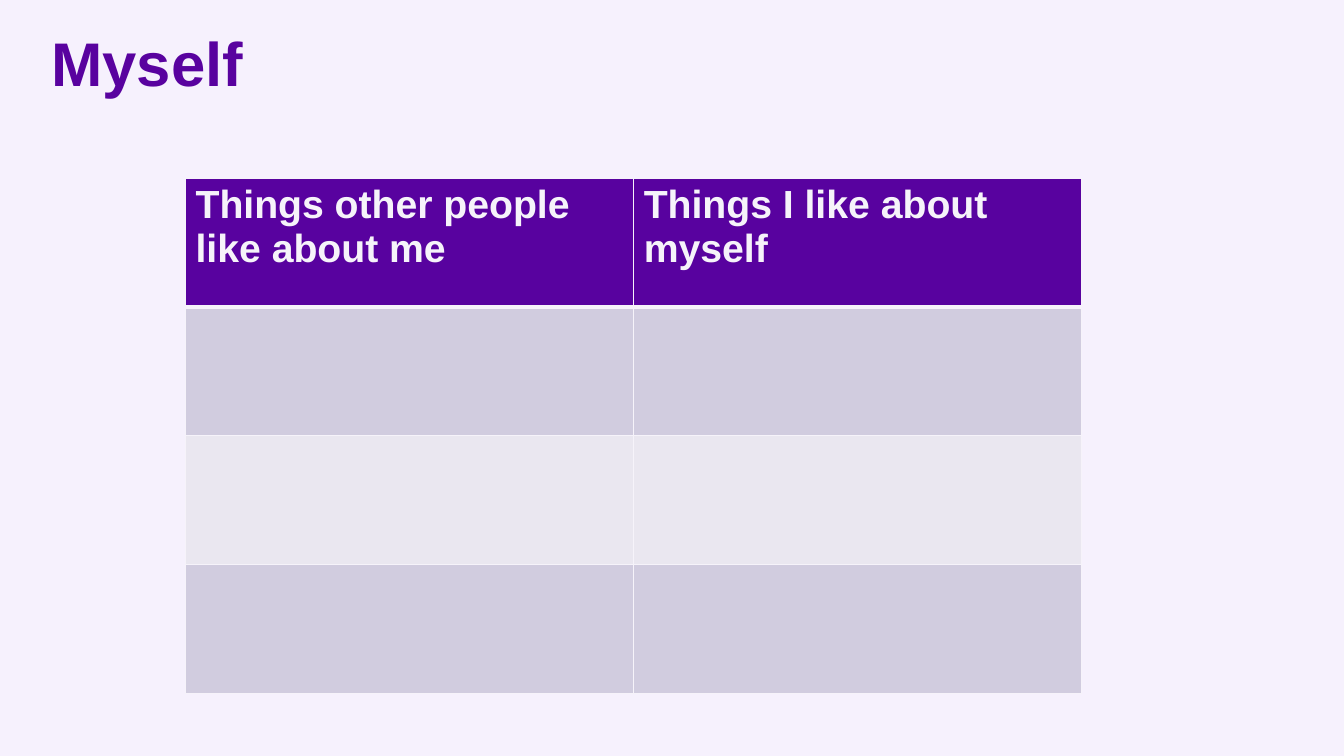
from pptx import Presentation
from pptx.dml.color import RGBColor
from pptx.enum.text import MSO_ANCHOR, PP_ALIGN
from pptx.oxml.ns import qn
from pptx.util import Inches, Pt
from lxml.etree import SubElement

BACKGROUND, PURPLE, HEADER_FILL, PALE = "F6F1FD", "59029F", "58029F", "F6F3FA"
BANDS = ["D1CCDF", "EAE7F0"]
HEADINGS = ["Things other people like about me", "Things I like about myself"]
ANSWER_ROWS = 3


def color(hex_code):
    return RGBColor.from_string(hex_code)


def add_text(paragraph, text, size, hex_code):
    run = paragraph.add_run()
    run.text = text
    run.font.name = "Arial"
    run.font.size = Pt(size)
    run.font.bold = True
    run.font.color.rgb = color(hex_code)


def add_borders(cell, bottom_width, top_width):
    properties = cell._tc.get_or_add_tcPr()
    widths = {"a:lnL": 1, "a:lnR": 1, "a:lnT": top_width, "a:lnB": bottom_width}
    for side, width in widths.items():
        line = SubElement(properties, qn(side), w=str(Pt(width)))
        fill = SubElement(line, qn("a:solidFill"))
        SubElement(fill, qn("a:srgbClr"), val=PALE)


def place_title(slide, left, top, width, height):
    title = slide.shapes.title
    title.left, title.top = Inches(left), Inches(top)
    title.width, title.height = Inches(width), Inches(height)
    frame = title.text_frame
    frame.margin_left = frame.margin_right = 0
    frame.margin_top = frame.margin_bottom = 0
    frame.word_wrap = True
    frame.vertical_anchor = MSO_ANCHOR.TOP
    heading = frame.paragraphs[0]
    heading.alignment = PP_ALIGN.LEFT
    heading.line_spacing = 0.9
    add_text(heading, "Myself", 44, PURPLE)


def add_likes_table(slide, left, top, width, height):
    likes = slide.shapes.add_table(
        ANSWER_ROWS + 1, len(HEADINGS),
        Inches(left), Inches(top), Inches(width), Inches(height)).table

    # Borders go before the fill in each cell's properties
    for row_index, row in enumerate(likes.rows):
        for column_index, cell in enumerate(row.cells):
            is_header = row_index == 0
            add_borders(cell, 3 if is_header else 1, 3 if row_index == 1 else 1)
            cell.fill.solid()
            if is_header:
                cell.fill.fore_color.rgb = color(HEADER_FILL)
                add_text(cell.text_frame.paragraphs[0],
                         HEADINGS[column_index], 28, PALE)
            else:
                band = BANDS[(row_index - 1) % len(BANDS)]
                cell.fill.fore_color.rgb = color(band)


def main():
    prs = Presentation()
    prs.slide_width, prs.slide_height = Inches(13.33), Inches(7.5)
    slide = prs.slides.add_slide(prs.slide_layouts[5])
    slide.background.fill.solid()
    slide.background.fill.fore_color.rgb = color(BACKGROUND)

    # Title and two-column worksheet
    place_title(slide, 0.51, 0.33, 12.17, 0.67)
    add_likes_table(slide, 1.84, 1.77, 8.89, 5.11)
    prs.save("out.pptx")


if __name__ == "__main__":
    main()
